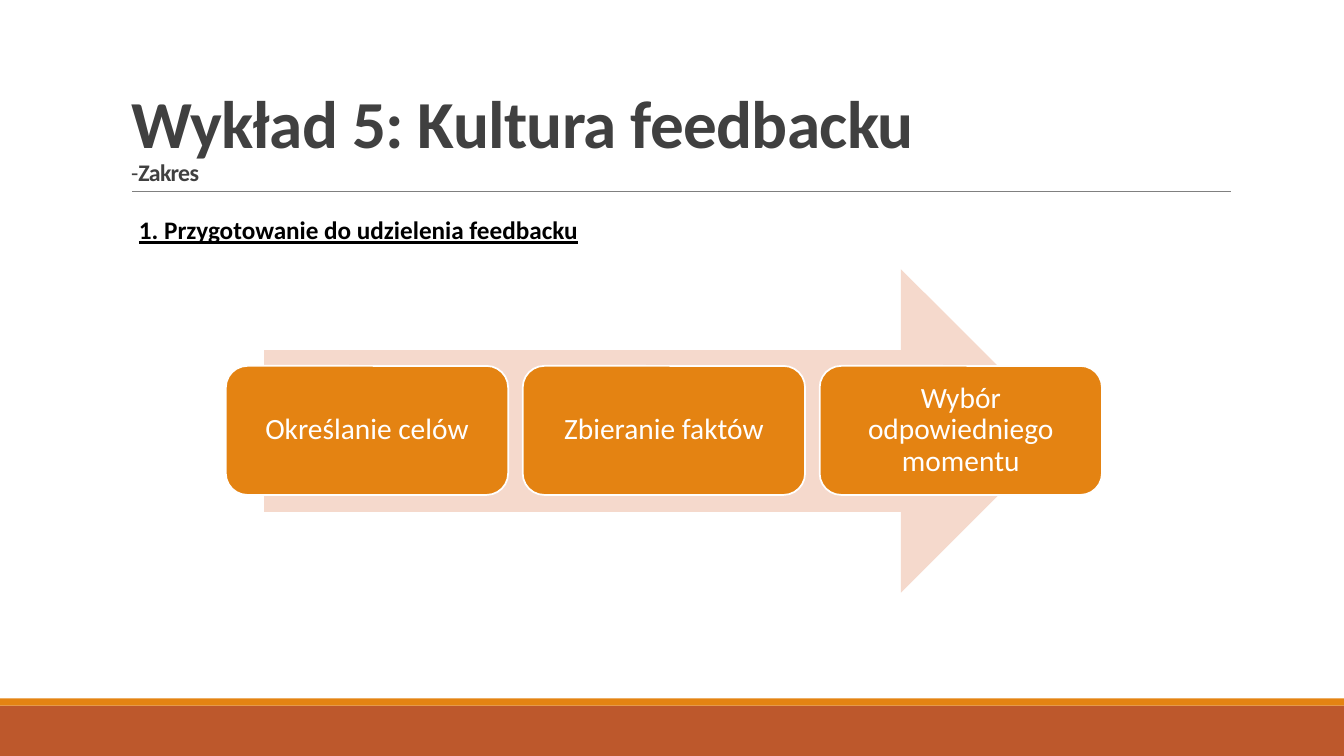
from dataclasses import dataclass

from lxml.etree import SubElement
from pptx import Presentation
from pptx.dml.color import RGBColor
from pptx.enum.shapes import MSO_CONNECTOR, MSO_SHAPE
from pptx.enum.text import MSO_ANCHOR, MSO_AUTO_SIZE, PP_ALIGN
from pptx.oxml.ns import qn
from pptx.shapes.autoshape import Shape
from pptx.slide import Slide
from pptx.text.text import Font
from pptx.util import Inches, Pt

ORANGE = "E48312"
RUST = "BD582C"
PEACH = "F5D9CC"
WHITE = "FFFFFF"
BLACK = "000000"
DARK_GRAY = "404040"
RULE_GRAY = "808080"

STEPS = ["Określanie celów", "Zbieranie faktów", "Wybór odpowiedniego momentu"]
STEP_LEFT = 2.24
STEP_PITCH = 2.945


@dataclass
class Box:
    left: float
    top: float
    width: float
    height: float

    def lengths(self) -> list[int]:
        return [Inches(n) for n in (self.left, self.top, self.width, self.height)]


@dataclass
class TitleRun:
    text: str
    size: float
    bold: bool


def color(value: str) -> RGBColor:
    return RGBColor.from_string(value)


def style_font(font: Font, size: float, value: str, bold: bool = False) -> None:
    font.name = "Calibri"
    font.size = Pt(size)
    font.bold = bold
    font.color.rgb = color(value)


def add_filled_shape(slide: Slide, kind: MSO_SHAPE, box: Box, fill: str) -> Shape:
    shape = slide.shapes.add_shape(kind, *box.lengths())
    shape.shadow.inherit = False
    shape.fill.solid()
    shape.fill.fore_color.rgb = color(fill)
    shape.line.fill.background()
    return shape


def add_title_rule(slide: Slide) -> None:
    rule = slide.shapes.add_connector(
        MSO_CONNECTOR.STRAIGHT, Inches(1.31), Inches(1.9), Inches(12.21), Inches(1.9)
    )
    rule.line.color.rgb = color(RULE_GRAY)
    rule.line.width = Pt(0.5)
    SubElement(rule._element.spPr, qn("a:effectLst"))


def fill_title(slide: Slide) -> None:
    title = slide.shapes.title
    title.left, title.top, title.width, title.height = Box(1.2, 0.31, 11, 1.59).lengths()
    frame = title.text_frame
    frame.auto_size = MSO_AUTO_SIZE.NONE
    frame.vertical_anchor = MSO_ANCHOR.BOTTOM
    paragraph = frame.paragraphs[0]
    paragraph.alignment = PP_ALIGN.LEFT
    paragraph.line_spacing = 0.85
    title_runs = [
        TitleRun("Wykład 5: Kultura feedbacku", 48, True),
        TitleRun("-", 17, False),
        TitleRun("Zakres", 17, True),
    ]
    for index, part in enumerate(title_runs):
        if index == 1:
            paragraph.add_line_break()
        run = paragraph.add_run()
        run.text = part.text
        style_font(run.font, part.size, DARK_GRAY, part.bold)
        run._r.get_or_add_rPr().set("spc", "-50")


def add_heading(slide: Slide) -> None:
    heading = slide.shapes.add_textbox(*Box(1.28, 2.08, 7.89, 0.4).lengths())
    heading.text_frame.word_wrap = True
    paragraph = heading.text_frame.paragraphs[0]
    paragraph.text = "1. Przygotowanie do udzielenia feedbacku"
    style_font(paragraph.font, 18, BLACK, bold=True)
    paragraph.font.underline = True


def add_step(slide: Slide, left: float, text: str) -> None:
    step = add_filled_shape(
        slide, MSO_SHAPE.ROUNDED_RECTANGLE, Box(left, 3.63, 2.8, 1.28), ORANGE
    )
    step.line.color.rgb = color(WHITE)
    step.line.width = Pt(1.25)
    frame = step.text_frame
    frame.word_wrap = True
    frame.vertical_anchor = MSO_ANCHOR.MIDDLE
    frame.margin_left = frame.margin_right = Inches(0.09)
    frame.margin_top = frame.margin_bottom = Inches(0.09)
    paragraph = frame.paragraphs[0]
    paragraph.text = text
    paragraph.alignment = PP_ALIGN.CENTER
    paragraph.line_spacing = 0.9
    style_font(paragraph.font, 21, WHITE)


def main() -> None:
    presentation = Presentation()
    presentation.slide_width = Inches(13.33)
    presentation.slide_height = Inches(7.5)
    slide = presentation.slides.add_slide(presentation.slide_layouts[5])

    add_filled_shape(slide, MSO_SHAPE.RECTANGLE, Box(0, 7, 13.33, 0.5), RUST)
    add_filled_shape(slide, MSO_SHAPE.RECTANGLE, Box(0, 6.93, 13.33, 0.07), ORANGE)
    add_title_rule(slide)
    fill_title(slide)
    add_filled_shape(slide, MSO_SHAPE.RIGHT_ARROW, Box(2.62, 2.67, 7.92, 3.21), PEACH)
    for index, text in enumerate(STEPS):
        add_step(slide, STEP_LEFT + index * STEP_PITCH, text)
    add_heading(slide)

    presentation.save("out.pptx")


if __name__ == "__main__":
    main()
